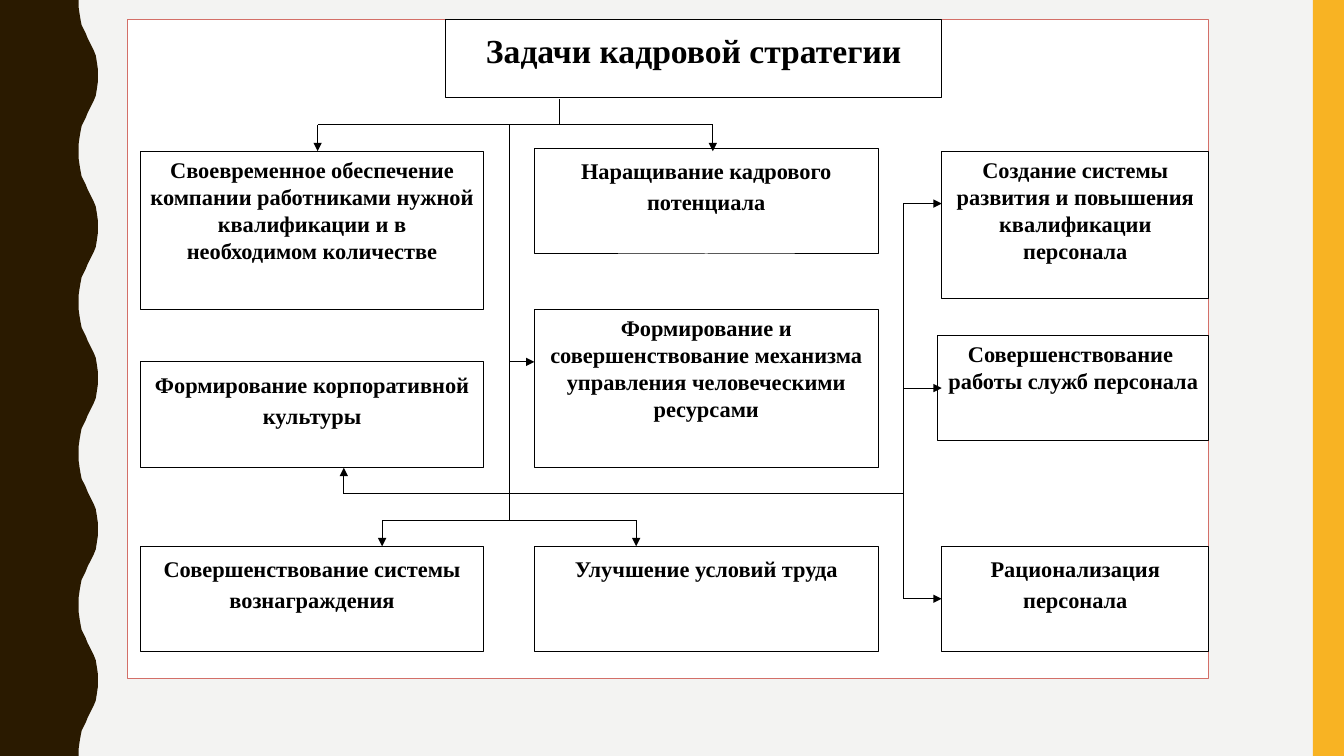
from lxml.etree import SubElement
from pptx import Presentation
from pptx.dml.color import RGBColor
from pptx.enum.shapes import MSO_CONNECTOR, MSO_SHAPE
from pptx.enum.text import MSO_ANCHOR, PP_ALIGN
from pptx.oxml.ns import qn
from pptx.util import Inches, Pt

COLORS = {
    "background": "F3F3F2",
    "wave": "2A1A00",
    "accent": "F8B323",
    "frame": "D36F68",
    "white": "FFFFFF",
    "ink": "000000",
}


class Diagram:
    """Holds the slide and the style shared by its elements."""

    font_name = "Times New Roman"
    line_width = 0.75

    def __init__(self, slide):
        self.slide = slide
        background = slide.background.fill
        background.solid()
        background.fore_color.rgb = self.color("background")

    def color(self, name):
        return RGBColor.from_string(COLORS[name])

    def paint(self, shape, fill, line=None, width=line_width):
        shape.shadow.inherit = False
        shape.fill.solid()
        shape.fill.fore_color.rgb = self.color(fill)
        if line:
            shape.line.color.rgb = self.color(line)
            shape.line.width = Pt(width)
        else:
            shape.line.fill.background()

    def rectangle(self, left, top, width, height, fill, line=None, line_width=line_width):
        shape = self.slide.shapes.add_shape(
            MSO_SHAPE.RECTANGLE, Inches(left), Inches(top), Inches(width), Inches(height))
        self.paint(shape, fill, line, line_width)
        return shape

    def outline(self, points, fill):
        builder = self.slide.shapes.build_freeform(
            Inches(points[0][0]), Inches(points[0][1]), scale=1.0)
        builder.add_line_segments([(Inches(x), Inches(y)) for x, y in points[1:]], close=True)
        self.paint(builder.convert_to_shape(), fill)

    def box(self, left, top, width, height, text, size=16, spacing=None, after=0):
        shape = self.rectangle(left, top, width, height, "white", "ink")
        frame = shape.text_frame
        frame.word_wrap = True
        frame.vertical_anchor = MSO_ANCHOR.TOP
        frame.text = text
        for paragraph in frame.paragraphs:
            paragraph.alignment = PP_ALIGN.CENTER
            paragraph.space_after = Pt(after)
            if spacing:
                paragraph.line_spacing = spacing
            for run in paragraph.runs:
                run.font.name = self.font_name
                run.font.size = Pt(size)
                run.font.bold = True
                run.font.color.rgb = self.color("ink")
        return shape

    def line(self, start, end, arrow=False):
        connector = self.slide.shapes.add_connector(
            MSO_CONNECTOR.STRAIGHT, *(Inches(value) for value in (*start, *end)))
        connector.line.color.rgb = self.color("ink")
        connector.line.width = Pt(self.line_width)
        if arrow:
            SubElement(connector.line._get_or_add_ln(), qn("a:tailEnd"), type="triangle")
        SubElement(connector._element.spPr, qn("a:effectLst"))
        return connector


def wave_points():
    """Left band whose right edge repeats one mirrored wave five times."""
    half = [(0.78, 0), (0.78, 0.07), (0.79, 0.14), (0.8, 0.2), (0.81, 0.25),
            (0.83, 0.29), (0.85, 0.33), (0.87, 0.38), (0.89, 0.42), (0.91, 0.46),
            (0.93, 0.5), (0.95, 0.55), (0.96, 0.61), (0.97, 0.68), (0.97, 0.75)]
    period = 1.5
    wave = half + [(x, period - y) for x, y in reversed(half[:-1])]
    edge = [(x, y + period * index) for index in range(5) for x, y in wave]
    return [(0, 0)] + edge + [(0, 7.5)]


def main():
    presentation = Presentation()
    presentation.slide_width = Inches(13.33)
    presentation.slide_height = Inches(7.5)
    slide = presentation.slides.add_slide(presentation.slide_layouts[6])
    diagram = Diagram(slide)

    # Side decoration and diagram frame
    diagram.outline(wave_points(), "wave")
    diagram.rectangle(13.02, 0, 0.31, 7.5, "accent")
    diagram.rectangle(1.26, 0.19, 10.73, 6.54, "white", "frame", 0.5)

    # Title
    diagram.box(4.42, 0.19, 4.92, 0.78, "Задачи кадровой стратегии",
                size=24, spacing=1.15, after=10)

    # Task boxes in three columns
    left, middle, right = 1.39, 5.3, 9.34
    wide, narrow = 3.41, 2.65
    bottom_row, bottom_height = 5.42, 1.04
    diagram.box(left, 1.5, wide, 1.57, "Своевременное обеспечение компании работниками "
                "нужной квалификации и в необходимом количестве", after=10)
    diagram.box(left, 3.59, wide, 1.05, "Формирование корпоративной культуры",
                spacing=1.15, after=10)
    diagram.box(left, bottom_row, wide, bottom_height,
                "Совершенствование системы\nвознаграждения", spacing=1.15)
    diagram.box(middle, 1.47, wide, 1.05, "Наращивание кадрового\nпотенциала", spacing=1.15)
    diagram.box(middle, 3.07, wide, 1.57, "Формирование и совершенствование механизма "
                "управления человеческими ресурсами")
    diagram.box(middle, bottom_row, wide, bottom_height, "Улучшение условий труда",
                spacing=1.15, after=10)
    diagram.box(right, 1.5, narrow, 1.46,
                "Создание системы развития и повышения квалификации персонала")
    diagram.box(9.3, 3.33, 2.69, 1.04, "Совершенствование \nработы служб персонала")
    rationalization = diagram.box(right, bottom_row, narrow, bottom_height,
                                  "Рационализация\nперсонала", spacing=1.15)

    # Branches under the title and above the bottom row
    diagram.line((5.55, 0.98), (5.55, 1.24))
    for bar_y, row_top, ends in ((1.24, 1.5, (3.15, 7.07)), (5.16, bottom_row, (3.79, 6.31))):
        diagram.line((ends[0], bar_y), (ends[1], bar_y))
        for x in ends:
            diagram.line((x, bar_y), (x, row_top), arrow=True)

    # Central trunk
    trunk = 5.05
    diagram.line((trunk, 1.24), (trunk, 5.16))
    diagram.line((trunk, 3.59), (middle, 3.59), arrow=True)

    # Right trunk and its link to corporate culture
    right_trunk, culture_x, link_y = 8.96, 3.41, 4.9
    diagram.line((right_trunk, 2.02), (right_trunk, 5.94))
    for y in (2.02, 3.85):
        diagram.line((right_trunk, y), (right, y), arrow=True)
    last_branch = diagram.line((right_trunk, 5.94), (right, 5.94), arrow=True)
    last_branch.end_connect(rationalization, 1)
    diagram.line((right_trunk, link_y), (culture_x, link_y))
    diagram.line((culture_x, link_y), (culture_x, 4.64), arrow=True)

    presentation.save("out.pptx")


if __name__ == "__main__":
    main()
